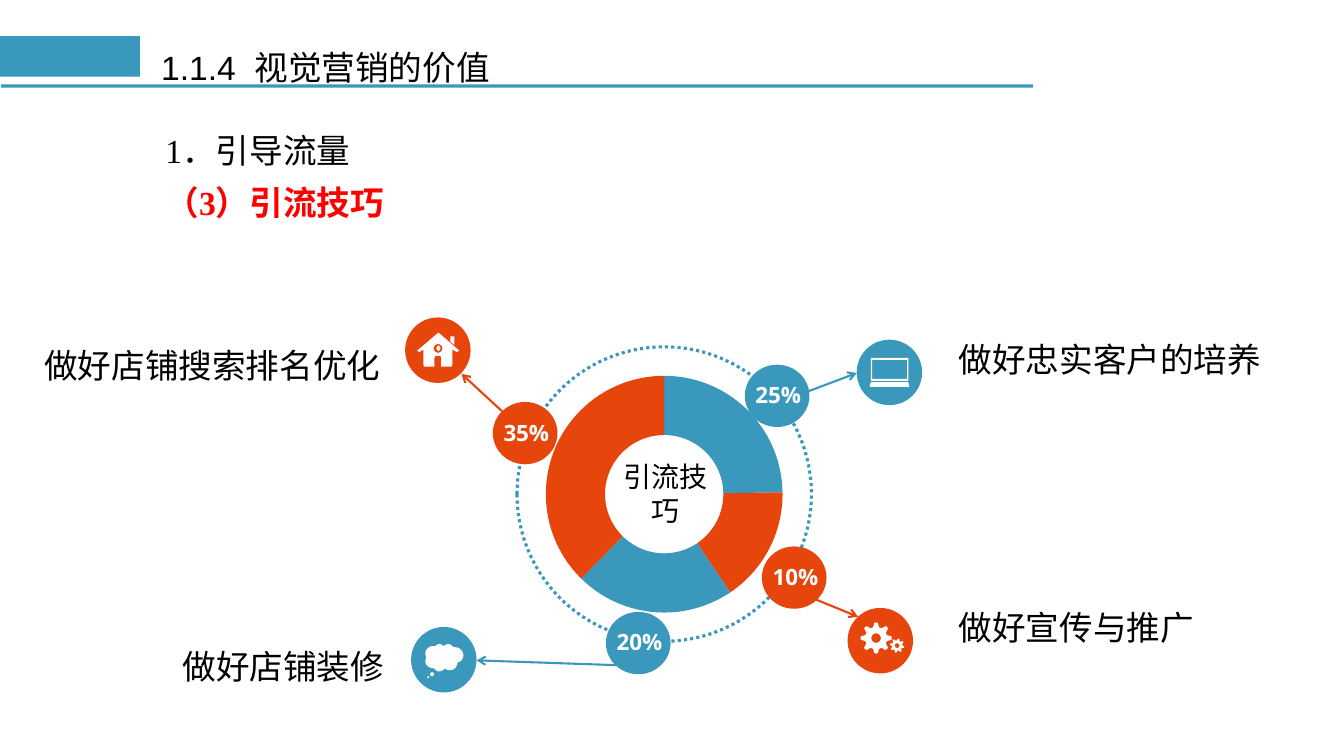
import math

from lxml import etree
from pptx import Presentation
from pptx.chart.data import CategoryChartData
from pptx.dml.color import RGBColor
from pptx.enum.chart import XL_CHART_TYPE
from pptx.enum.dml import MSO_LINE
from pptx.enum.shapes import MSO_CONNECTOR, MSO_SHAPE
from pptx.enum.text import MSO_ANCHOR, PP_ALIGN
from pptx.oxml import parse_xml
from pptx.oxml.ns import nsdecls, qn
from pptx.util import Cm, Pt

DOUGHNUT = XL_CHART_TYPE.DOUGHNUT
DOTTED = MSO_LINE.ROUND_DOT
STRAIGHT = MSO_CONNECTOR.STRAIGHT
OVAL, RECTANGLE = MSO_SHAPE.OVAL, MSO_SHAPE.RECTANGLE
MIDDLE, TOP = MSO_ANCHOR.MIDDLE, MSO_ANCHOR.TOP
LEFT, CENTER = PP_ALIGN.LEFT, PP_ALIGN.CENTER
BLUE, ORANGE, WHITE, BLACK, RED = "3A98BC", "E6460C", "FFFFFF", "000000", "FF0000"
SERIF = "Times New Roman"
BADGE_WIDTH, BADGE_HEIGHT, DISC_SIZE = 1.63, 1.57, 1.65

HOUSE = [(.84, .38), (.3, .84), (.36, .87), (.46, .81), (.46, 1.19), (.48, 1.24),
         (.74, 1.24), (.74, 1.02), (.76, .97), (.89, .97), (.91, 1.02), (.91, 1.24),
         (1.17, 1.24), (1.19, 1.19), (1.19, .81), (1.3, .87), (1.37, .84)]
CHIMNEY = [(1.24, .69), (1.24, .48), (1.14, .48), (1.14, .61)]
LAPTOP_FRAME = [(.36, .46), (1.3, .46), (1.3, 1.04), (.36, 1.04)]
LAPTOP_SCREEN = [(.39, .51), (1.27, .51), (1.27, .99), (.39, .99)]
LAPTOP_BASE = [(.36, 1.07), (1.3, 1.07), (1.32, 1.14), (1.32, 1.19), (.33, 1.19), (.33, 1.14)]
CLOUD_START = (1.32, .71)
CLOUD_CURVES = [
    [(1.32, .61), (1.22, .51), (1.12, .51)], [(1.09, .51), (1.09, .51), (1.07, .51)],
    [(1.04, .48), (.99, .43), (.94, .43)], [(.89, .43), (.86, .46), (.81, .48)],
    [(.79, .46), (.76, .43), (.71, .43)], [(.66, .43), (.64, .46), (.61, .48)],
    [(.58, .48), (.56, .48), (.56, .48)], [(.46, .48), (.36, .56), (.36, .66)],
    [(.36, .71), (.38, .74), (.38, .76)], [(.38, .79), (.36, .84), (.36, .86)],
    [(.36, .97), (.46, 1.04), (.56, 1.04)], [(.56, 1.04), (.56, 1.04), (.58, 1.04)],
    [(.61, 1.09), (.66, 1.12), (.71, 1.12)], [(.76, 1.12), (.81, 1.09), (.86, 1.04)],
    [(.89, 1.07), (.91, 1.09), (.97, 1.09)], [(1.07, 1.09), (1.17, 1.02), (1.17, .89)],
    [(1.24, .89), (1.32, .81), (1.32, .71)]]


def color(value):
    """Return the colour of a hex string."""
    return RGBColor.from_string(value)


def set_insets(frame, side, edge):
    """Set the side and edge margins of a text frame and let it wrap."""
    frame.margin_left = frame.margin_right = Cm(side)
    frame.margin_top = frame.margin_bottom = Cm(edge)
    frame.word_wrap = True


def style_text(paragraph, size, name, shade, bold=False, align=LEFT):
    """Format one paragraph."""
    paragraph.alignment = align
    font = paragraph.font
    font.size, font.name, font.bold = Pt(size), name, bold
    font.color.rgb = color(shade)


def fill_shape(shape, fill):
    """Give a shape a plain fill without outline or shadow."""
    shape.shadow.inherit = False
    shape.fill.solid()
    shape.fill.fore_color.rgb = color(fill)
    shape.line.fill.background()


def add_solid(slide, kind, box, fill):
    """Add a filled preset shape."""
    shape = slide.shapes.add_shape(kind, *map(Cm, box))
    fill_shape(shape, fill)


def add_text(slide, box, text, insets, size, name, shade, bold=False, align=LEFT):
    """Add a one-paragraph text box."""
    frame = slide.shapes.add_textbox(*map(Cm, box)).text_frame
    set_insets(frame, *insets)
    frame.text = text
    style_text(frame.paragraphs[0], size, name, shade, bold, align)


def add_outline(slide, origin, *contours):
    """Add a white freeform; later contours cut holes in the first."""
    placed = [[(Cm(origin[0] + x), Cm(origin[1] + y)) for x, y in contour]
              for contour in contours]
    builder = slide.shapes.build_freeform(*placed[0][0], scale=1.0)
    builder.add_line_segments(placed[0][1:], close=True)
    for hole in placed[1:]:
        builder.move_to(*hole[0])
        builder.add_line_segments(hole[1:], close=True)
    fill_shape(builder.convert_to_shape(), WHITE)


def polar(center, radius, degrees):
    """Return the point at an angle on a circle."""
    angle = math.radians(degrees)
    return center[0] + radius * math.cos(angle), center[1] + radius * math.sin(angle)


def circle(center, radius):
    """Return the points of a circle."""
    return [polar(center, radius, degrees) for degrees in range(0, 360, 15)]


def gear(center, outer, root, tilt):
    """Return the points of a gear with eight teeth."""
    profile = [(root, -16), (outer, -6), (outer, 6), (root, 16)]
    return [polar(center, radius, tooth * 45 + tilt + offset)
            for tooth in range(8) for radius, offset in profile]


def cloud():
    """Return points along the curves of the cloud."""
    points = [CLOUD_START]
    for first, second, end in CLOUD_CURVES:
        start = points[-1]
        for step in range(1, 7):
            t = step / 6
            weights = ((1 - t) ** 3, 3 * t * (1 - t) ** 2, 3 * t * t * (1 - t), t ** 3)
            points.append(tuple(sum(weight * point[axis] for weight, point
                                    in zip(weights, (start, first, second, end)))
                                for axis in (0, 1)))
    return points


def draw_house(slide, x, y):
    """Draw the house icon in the disc at x, y."""
    add_outline(slide, (x, y), HOUSE, circle((.83, .78), .11))
    add_outline(slide, (x, y), CHIMNEY)
    add_solid(slide, OVAL, (x + .79, y + .71, .1, .13), WHITE)


def draw_laptop(slide, x, y):
    """Draw the laptop icon in the disc at x, y."""
    add_outline(slide, (x, y), LAPTOP_FRAME, LAPTOP_SCREEN)
    add_outline(slide, (x, y), LAPTOP_BASE)


def draw_gears(slide, x, y):
    """Draw the two gears in the disc at x, y."""
    for center, outer, root, hole, tilt in (((.72, .76), .39, .28, .12, 0),
                                            ((1.25, .95), .18, .13, .06, 12)):
        add_outline(slide, (x, y), gear(center, outer, root, tilt), circle(center, hole))


def draw_cloud(slide, x, y):
    """Draw the thought cloud in the disc at x, y."""
    for left, top, size in ((.48, 1.14, .1), (.41, 1.24, .05)):
        add_solid(slide, OVAL, (x + left, y + top, size, size), WHITE)
    add_outline(slide, (x, y), cloud())


def draw_header(slide, x, y):
    """Draw the heading bars and the title."""
    add_solid(slide, RECTANGLE, (x + .03, y + 1.22, 26.01, .08), BLUE)
    add_solid(slide, RECTANGLE, (x, y, 3.53, 1.02), BLUE)
    title = slide.shapes.title
    title.left, title.top, title.width, title.height = map(Cm, (x + 3.73, y + .26, 27.76, 1.19))
    frame = title.text_frame
    set_insets(frame, .33, .18)
    frame.vertical_anchor = MIDDLE
    frame.text = "1.1.4  视觉营销的价值"
    style_text(frame.paragraphs[0], 24, "Arial", BLACK)
    frame.paragraphs[0].line_spacing = .9


def draw_body(slide, box):
    """Fill the body placeholder with the two headings."""
    body = slide.placeholders[1]
    body.left, body.top, body.width, body.height = map(Cm, box)
    frame = body.text_frame
    set_insets(frame, .33, .18)
    frame.vertical_anchor = TOP
    frame.text = "1．引导流量\n（3）引流技巧"
    for paragraph, shade, bold in zip(frame.paragraphs, (BLACK, RED), (False, True)):
        style_text(paragraph, 24, SERIF, shade, bold)
        paragraph.line_spacing, paragraph.space_before = 1.3, Pt(0)
        properties = paragraph._p.get_or_add_pPr()
        properties.set("marL", "0")
        properties.set("indent", str(Cm(1.5)))
        etree.SubElement(properties, qn("a:buNone"))


def draw_doughnut(slide, x, y):
    """Draw the doughnut with its dotted ring and centre text."""
    data = CategoryChartData()
    data.categories = ["1", "2", "3", "4"]
    data.add_series("Series 1", (25, 16, 22, 38))
    chart = slide.shapes.add_chart(DOUGHNUT, *map(Cm, (x, y, 9.96, 6.63)), data).chart
    chart.has_legend = chart.has_title = False
    chart.font.size, chart.font.name = Pt(18), SERIF
    chart.font.color.rgb = color(BLACK)
    for index, shade in enumerate((BLUE, ORANGE) * 2):
        point = chart.plots[0].series[0].points[index]
        point.format.fill.solid()
        point.format.fill.fore_color.rgb = color(shade)
        point.format.line.fill.background()
    area = chart._chartSpace.chart.plotArea
    area.find(".//" + qn("c:holeSize")).set("val", "57")
    for layout in area.findall(qn("c:layout")):
        area.remove(layout)
    area.insert(0, parse_xml(
        f'<c:layout {nsdecls("c")}><c:manualLayout><c:layoutTarget val="inner"/>'
        '<c:xMode val="edge"/><c:yMode val="edge"/><c:x val="0.2"/><c:y val="0.05"/>'
        '<c:w val="0.6"/><c:h val="0.9"/></c:manualLayout></c:layout>'))
    ring = slide.shapes.add_shape(OVAL, *map(Cm, (x + 1.27, y - .4, 7.42, 7.42)))
    ring.shadow.inherit = False
    ring.fill.background()
    ring.line.color.rgb = color(BLUE)
    ring.line.width, ring.line.dash_style = Pt(2.25), DOTTED
    add_text(slide, (x + 3.71, y + 2.37, 2.59, 1.88), "引流技巧", (.18, .08),
             20, SERIF, BLACK, align=CENTER)


def draw_branch(slide, shade, percent, badge, disc, arrow, draw_icon, label, label_box):
    """Draw a percentage badge, its arrow, icon disc and label."""
    add_text(slide, label_box, label, (.13, .05), 24, SERIF, BLACK)
    add_solid(slide, OVAL, (*badge, BADGE_WIDTH, BADGE_HEIGHT), shade)
    add_solid(slide, OVAL, (*disc, DISC_SIZE, DISC_SIZE), shade)
    draw_icon(slide, *disc)
    add_text(slide, (badge[0] + .03, badge[1] + .34, BADGE_WIDTH, .86), percent, (.18, .08),
             16, "Open Sans", WHITE, True, CENTER)
    connector = slide.shapes.add_connector(STRAIGHT, *map(Cm, arrow))
    connector.line.color.rgb = color(shade)
    connector.line.width = Pt(1.5)
    properties = connector._element.spPr
    etree.SubElement(properties.find(qn("a:ln")), qn("a:tailEnd"), type="arrow")
    etree.SubElement(properties, qn("a:effectLst"))


def main():
    """Build and save the slide."""
    presentation = Presentation()
    presentation.slide_width, presentation.slide_height = Cm(33.87), Cm(19.05)
    slide = presentation.slides.add_slide(presentation.slide_layouts[1])
    draw_header(slide, 0, .91)
    draw_body(slide, (2.34, 2.79, 28.83, 3.12))
    draw_doughnut(slide, 11.76, 9.14)
    for branch in (
            (ORANGE, "35%", (12.42, 10.13), (10.21, 8), (12.65, 10.36, 11.63, 9.42),
             draw_house, "做好店铺搜索排名优化", (.99, 8.64, 8.94, 1.14)),
            (BLUE, "25%", (18.77, 9.19), (21.59, 8.56), (20.24, 9.91, 21.59, 9.4),
             draw_laptop, "做好忠实客户的培养", (24.03, 8.48, 8.46, 1.14)),
            (ORANGE, "10%", (19.2, 13.77), (21.36, 15.32), (20.57, 15.11, 21.62, 15.54),
             draw_gears, "做好宣传与推广", (24.03, 15.24, 6.68, 1.14)),
            (BLUE, "20%", (15.27, 15.42), (10.36, 15.8), (15.52, 16.76, 12.01, 16.64),
             draw_cloud, "做好店铺装修", (4.47, 16.23, 5.74, 1.14))):
        draw_branch(slide, *branch)
    presentation.save("out.pptx")


if __name__ == "__main__":
    main()
